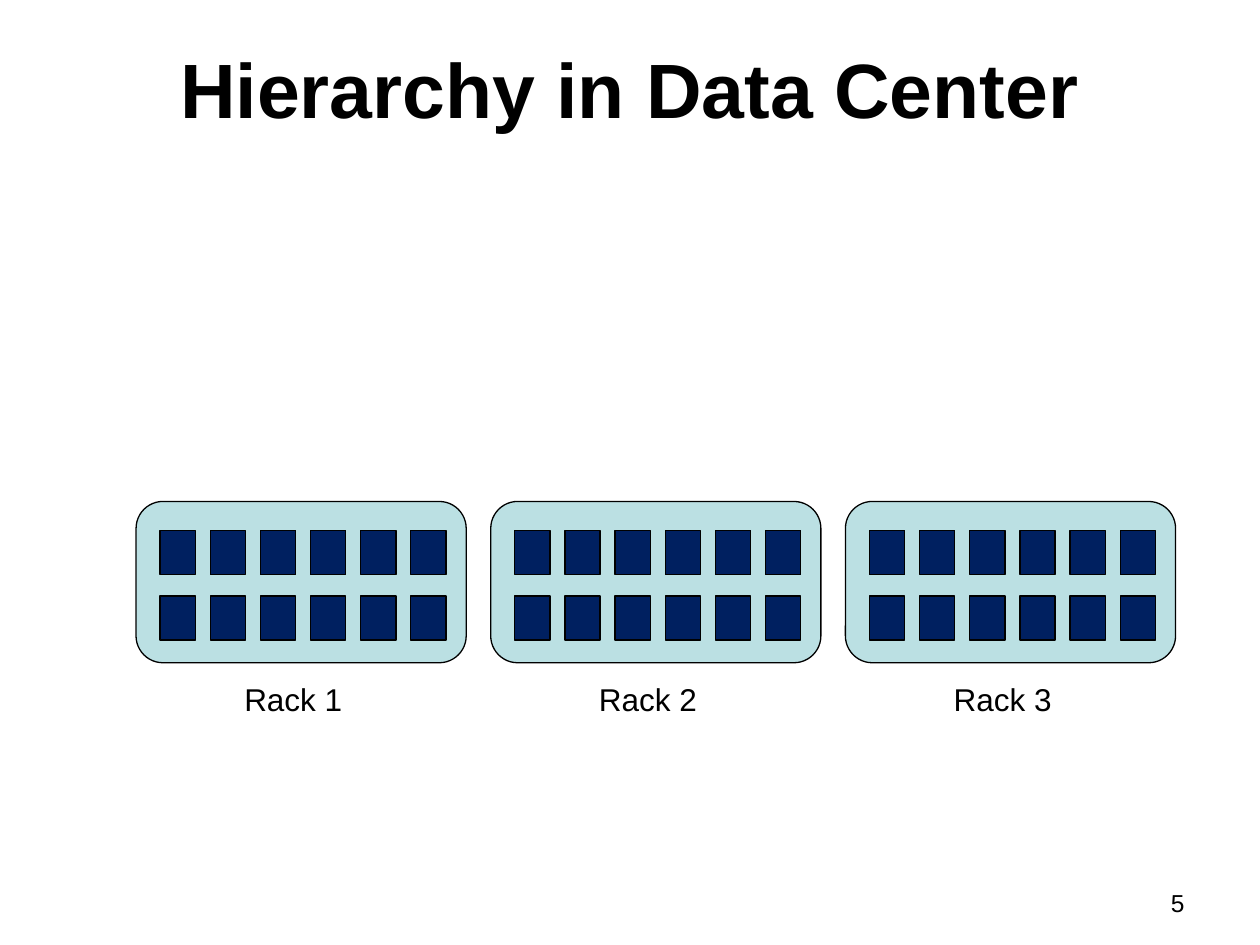
from pptx import Presentation
from pptx.dml.color import RGBColor
from pptx.enum.shapes import MSO_SHAPE as Preset
from pptx.enum.text import MSO_ANCHOR as Anchor, PP_ALIGN as Align
from pptx.util import Inches, Pt


def add_box(preset, left, top, width, height, fill):
    shape = slide.shapes.add_shape(
        preset, Inches(left), Inches(top), Inches(width), Inches(height))
    shape.shadow.inherit = False
    shape.fill.solid()
    shape.fill.fore_color.rgb = RGBColor.from_string(fill)
    shape.line.color.rgb = RGBColor.from_string("000000")
    shape.line.width = Pt(0.75)


def write_text(shape, text, size, align, bold=False):
    shape.text_frame.text = text
    paragraph = shape.text_frame.paragraphs[0]
    paragraph.alignment = align
    font = paragraph.runs[0].font
    font.name = "Arial"
    font.size = Pt(size)
    font.bold = bold
    font.color.rgb = RGBColor.from_string("000000")


presentation = Presentation()
presentation.slide_width = Inches(10)
presentation.slide_height = Inches(7.5)
slide = presentation.slides.add_slide(presentation.slide_layouts[5])

title = slide.shapes.title
title.left, title.top = Inches(0.5), Inches(0.3)
title.width, title.height = Inches(9), Inches(0.79)
write_text(title, "Hierarchy in Data Center", 44, Align.CENTER, bold=True)
title.text_frame.vertical_anchor = Anchor.MIDDLE

page_number = slide.shapes.add_textbox(
    Inches(7.17), Inches(7), Inches(2.33), Inches(0.35))
page_number.text_frame.word_wrap = True
write_text(page_number, "5", 14, Align.RIGHT)

rack_pitch = 2.815
server_pitch_x, server_pitch_y = 0.398, 0.52

for rack in range(3):
    rack_left = 1.08 + rack * rack_pitch
    add_box(Preset.FLOWCHART_ALTERNATE_PROCESS, rack_left, 3.98, 2.62, 1.28, "BBE0E3")
    for column in range(6):
        for row in range(2):
            add_box(Preset.FLOWCHART_PROCESS,
                    rack_left + 0.19 + column * server_pitch_x,
                    4.21 + row * server_pitch_y, 0.28, 0.35, "002060")
    label = slide.shapes.add_textbox(
        Inches(rack_left + 0.76), Inches(5.35), Inches(1.11), Inches(0.56))
    label.text_frame.word_wrap = True
    write_text(label, f"Rack {rack + 1}", 18, Align.LEFT)

presentation.save("out.pptx")
